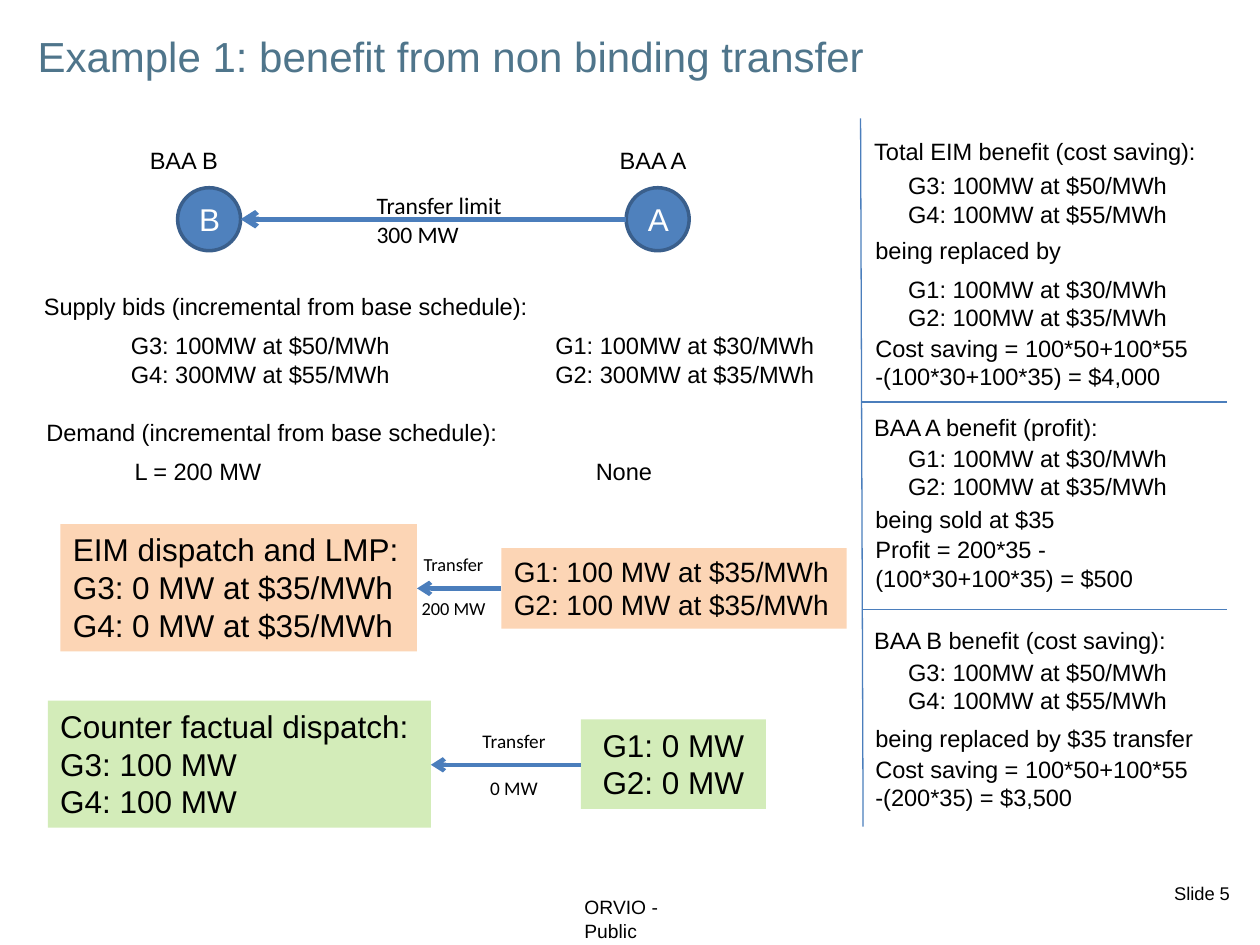
import pptx
import pptx.dml.color
import pptx.enum.shapes
import pptx.enum.text
import pptx.oxml.ns
import pptx.util
from lxml import etree
from pptx.util import Inches

COLORS = {
    "text": "000000", "title": "4F758B", "white": "FFFFFF",
    "node": "4F81BD", "node_edge": "3A5F8C", "line": "4B7EBC",
    "dispatch": "FCD5B5", "counterfactual": "D3ECB9",
}
LEFT = pptx.enum.text.PP_ALIGN.LEFT
CENTER = pptx.enum.text.PP_ALIGN.CENTER
SHAPES = pptx.enum.shapes.MSO_SHAPE


def rgb(name):
    return pptx.dml.color.RGBColor.from_string(COLORS[name])


def write(frame, lines, size, color="text", font="Arial", align=LEFT, gap=0):
    for index, line in enumerate(lines):
        paragraph = frame.paragraphs[0] if index == 0 else frame.add_paragraph()
        paragraph.text = line
        paragraph.alignment = align
        if index:
            paragraph.space_before = pptx.util.Pt(gap)
        paragraph.font.size = pptx.util.Pt(size)
        paragraph.font.name = font
        paragraph.font.color.rgb = rgb(color)


def add_text(slide, left, top, width, lines, size=13.5, wrap=True, **style):
    height = 0.1 + len(lines) * size / 60
    frame = slide.shapes.add_textbox(
        Inches(left), Inches(top), Inches(width), Inches(height)).text_frame
    frame.word_wrap = wrap
    write(frame, lines, size, **style)


def add_filled(slide, kind, left, top, width, height, fill):
    shape = slide.shapes.add_shape(
        kind, Inches(left), Inches(top), Inches(width), Inches(height))
    shape.shadow.inherit = False
    shape.fill.solid()
    shape.fill.fore_color.rgb = rgb(fill)
    return shape


def add_node(slide, left, letter):
    node = add_filled(slide, SHAPES.OVAL, left, 1.49, 0.5, 0.5, "node")
    node.line.color.rgb = rgb("node_edge")
    node.line.width = pptx.util.Pt(2)
    write(node.text_frame, [letter], 18, color="white", align=CENTER)


def add_panel(slide, left, top, width, height, fill, lines, size=18, align=LEFT):
    panel = add_filled(slide, SHAPES.RECTANGLE, left, top, width, height, fill)
    panel.line.fill.background()
    panel.text_frame.vertical_anchor = pptx.enum.text.MSO_ANCHOR.TOP
    write(panel.text_frame, lines, size, align=align)


def add_line(slide, start, end, width=0.75, arrow=False):
    connector = slide.shapes.add_connector(
        pptx.enum.shapes.MSO_CONNECTOR.STRAIGHT,
        *(Inches(value) for value in start + end))
    connector.line.color.rgb = rgb("line")
    connector.line.width = pptx.util.Pt(width)
    if arrow:
        head = etree.SubElement(
            connector.line._get_or_add_ln(), pptx.oxml.ns.qn("a:headEnd"))
        head.set("type", "arrow")
    etree.SubElement(connector._element.spPr, pptx.oxml.ns.qn("a:effectLst"))


def bids(first, first_mw, second_mw):
    prices = {1: 30, 2: 35, 3: 50, 4: 55}
    return [f"G{unit}: {mw}MW at ${prices[unit]}/MWh"
            for unit, mw in ((first, first_mw), (first + 1, second_mw))]


def add_network(slide):
    add_node(slide, 1.41, "B")
    add_node(slide, 4.97, "A")
    add_line(slide, (1.91, 1.74), (4.97, 1.74), 3, arrow=True)
    add_text(slide, 2.89, 1.47, 1.42, ["Transfer limit 300 MW"], font="Calibri")
    add_text(slide, 1.09, 1.11, 1.38, ["BAA B"])
    add_text(slide, 4.82, 1.11, 1.38, ["BAA A"])


def add_bids_and_demand(slide):
    add_text(slide, 0.25, 2.27, 4.46,
             ["Supply bids (incremental from base schedule):"])
    add_text(slide, 0.94, 2.58, 2.44, bids(3, 100, 300))
    add_text(slide, 4.31, 2.58, 2.44, bids(1, 100, 300))
    add_text(slide, 0.27, 3.27, 4.23,
             ["Demand (incremental from base schedule):"])
    add_text(slide, 0.97, 3.58, 2.81, ["L = 200 MW"])
    add_text(slide, 4.63, 3.58, 2.81, ["None"])


def add_dispatch(slide):
    add_panel(slide, 0.48, 4.16, 2.83, 1.01, "dispatch",
              ["EIM dispatch and LMP:", "G3: 0 MW at $35/MWh",
               "G4: 0 MW at $35/MWh"])
    add_panel(slide, 3.98, 4.35, 2.74, 0.64, "dispatch",
              ["G1: 100 MW at $35/MWh", "G2: 100 MW at $35/MWh"], size=16)
    add_line(slide, (3.31, 4.67), (3.98, 4.67), 2.5, arrow=True)
    add_text(slide, 3.13, 4.34, 0.94, ["Transfer", "200 MW"], size=10.5,
             font="Calibri", align=CENTER, gap=12.8)

    add_panel(slide, 0.38, 5.56, 3.04, 1.01, "counterfactual",
              ["Counter factual dispatch:", "G3: 100 MW", "G4: 100 MW"])
    add_panel(slide, 4.61, 5.71, 1.47, 0.71, "counterfactual",
              ["G1: 0 MW", "G2: 0 MW"], align=CENTER)
    add_line(slide, (3.42, 6.07), (4.61, 6.07), 2.5, arrow=True)
    add_text(slide, 3.63, 5.74, 0.9, ["Transfer", "0 MW"], size=11,
             font="Calibri", align=CENTER, gap=13.4)


def add_benefits(slide):
    add_line(slide, (6.83, 0.94), (6.85, 6.56))
    for top in (3.19, 4.84):
        add_line(slide, (6.84, top), (9.74, top))

    headings = [(1.04, "Total EIM benefit (cost saving):"),
                (3.23, "BAA A benefit (profit):"),
                (4.92, "BAA B benefit (cost saving):")]
    traded_bids = [(1.31, 3), (2.13, 1), (3.47, 1), (5.17, 3)]
    reasons = [(1.82, "being replaced by"),
               (2.6, "Cost saving = 100*50+100*55 -(100*30+100*35) = $4,000"),
               (3.96, "being sold at $35"),
               (4.2, "Profit = 200*35 -(100*30+100*35) = $500"),
               (5.7, "being replaced by $35 transfer"),
               (5.94, "Cost saving = 100*50+100*55 -(200*35) = $3,500")]
    for top, heading in headings:
        add_text(slide, 6.84, top, 2.76, [heading])
    for top, first in traded_bids:
        add_text(slide, 7.11, top, 2.44, bids(first, 100, 100))
    for top, reason in reasons:
        add_text(slide, 6.85, top, 2.76, [reason])


def main():
    deck = pptx.Presentation()
    deck.slide_width = Inches(10)
    deck.slide_height = Inches(7.5)
    slide = deck.slides.add_slide(deck.slide_layouts[6])
    add_text(slide, 0.2, 0.19, 7.7,
             ["Example 1: benefit from non binding transfer"],
             size=24, color="title")
    add_network(slide)
    add_bids_and_demand(slide)
    add_dispatch(slide)
    add_benefits(slide)
    add_text(slide, 4.54, 7.06, 1.24, ["ORVIO - Public"], size=11, wrap=False)
    add_text(slide, 9.22, 6.95, 0.78, ["Slide 5"], size=10.5)
    deck.save("out.pptx")


if __name__ == "__main__":
    main()
